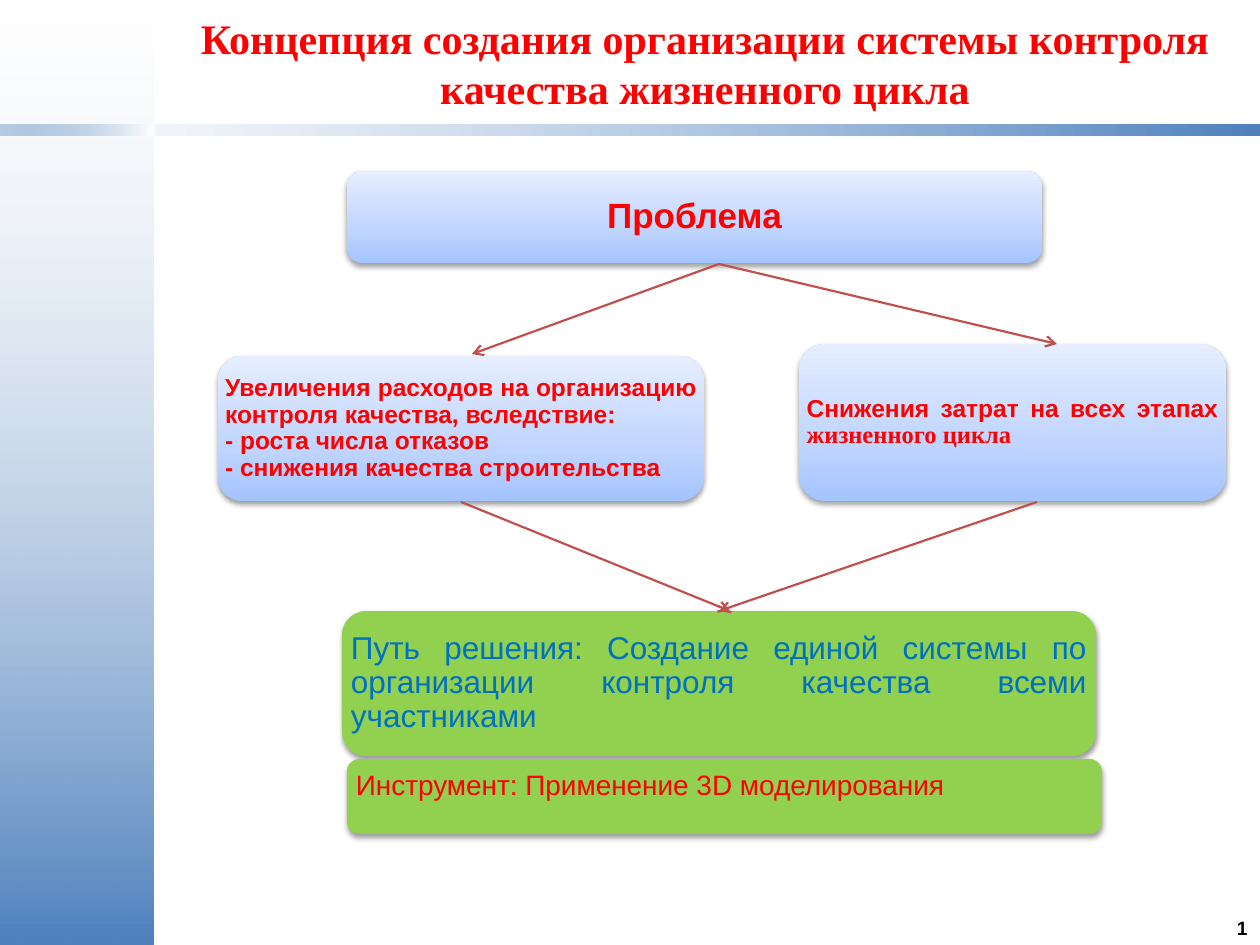
from lxml.etree import SubElement
from pptx import Presentation
from pptx.dml.color import RGBColor
from pptx.enum.shapes import MSO_CONNECTOR, MSO_SHAPE
from pptx.enum.text import MSO_ANCHOR, PP_ALIGN
from pptx.oxml.ns import qn
from pptx.util import Emu, Pt

PIXEL = 914400 / 126
WHITE = RGBColor(0xFF, 0xFF, 0xFF)
BLACK = RGBColor(0x00, 0x00, 0x00)
RED = RGBColor(0xFF, 0x00, 0x00)
BLUE = RGBColor(0x4F, 0x81, 0xBD)
TEXT_BLUE = RGBColor(0x00, 0x70, 0xC0)
GREEN = RGBColor(0x92, 0xD0, 0x50)
ARROW_RED = RGBColor(0xC0, 0x50, 0x4D)
PALE_BLUES = [
    (0, RGBColor(0xA4, 0xC4, 0xFF), 100),
    (35, RGBColor(0xBF, 0xD4, 0xFF), 100),
    (100, RGBColor(0xE6, 0xEE, 0xFF), 100),
]
CORNER = 0.1667
CORNER_INSET = 0.29


def px(*lengths):
    """Turn pixel lengths into a list of EMU lengths."""
    return [Emu(round(length * PIXEL)) for length in lengths]


def fill_gradient(shape, stops, angle):
    """Fill a shape with (position, colour, opacity) stops in percent."""
    gradient = shape._element.spPr.makeelement(qn("a:gradFill"), {"rotWithShape": "1"})
    stop_list = SubElement(gradient, qn("a:gsLst"))
    for position, color, opacity in stops:
        stop = SubElement(stop_list, qn("a:gs"), pos=str(position * 1000))
        value = SubElement(stop, qn("a:srgbClr"), val=str(color))
        SubElement(value, qn("a:alpha"), val=str(opacity * 1000))
    SubElement(gradient, qn("a:lin"), ang=str(angle * 60000), scaled="0")
    shape._element.spPr.find(qn("a:prstGeom")).addnext(gradient)


def add_soft_shadow(shape):
    """Give a shape a soft shadow below it."""
    effects = shape._element.spPr.find(qn("a:effectLst"))
    shadow = SubElement(effects, qn("a:outerShdw"), blurRad=str(Pt(3.1)),
                        dist=str(Pt(1.6)), dir="5400000", rotWithShape="0")
    color = SubElement(shadow, qn("a:srgbClr"), val=str(BLACK))
    SubElement(color, qn("a:alpha"), val="38000")


def write_text(frame, paragraphs, size, color=RED, bold=False, font="Arial",
               align=PP_ALIGN.CENTER, anchor=MSO_ANCHOR.MIDDLE, spacing=None, margin=None):
    """Write paragraphs, each a list of texts or (text, font) pairs, into a frame."""
    frame.word_wrap = True
    frame.vertical_anchor = anchor
    if margin is not None:
        frame.margin_left = frame.margin_right = margin
        frame.margin_top = frame.margin_bottom = margin
    for index, runs in enumerate(paragraphs):
        paragraph = frame.add_paragraph() if index else frame.paragraphs[0]
        paragraph.alignment = align
        paragraph.line_spacing = spacing
        for item in runs:
            text, run_font = item if isinstance(item, tuple) else (item, font)
            run = paragraph.add_run()
            run.text = text
            run.font.name = run_font
            run.font.size = Pt(size)
            run.font.bold = bold
            run.font.color.rgb = color


def add_band(slide, box, stops, angle):
    """Add a plain gradient rectangle."""
    shape = slide.shapes.add_shape(MSO_SHAPE.RECTANGLE, *px(*box))
    shape.shadow.inherit = False
    shape.line.fill.background()
    fill_gradient(shape, stops, angle)


def add_frame(slide, box):
    """Add the side panel, header bands and page number within a box."""
    left, top, width, height = box
    side, bar_top, bar = 154, top + 125, 11
    add_band(slide, (left, top, side, height), [(0, WHITE, 24), (100, BLUE, 100)], 90)
    add_band(slide, (left, bar_top, width, bar), [(0, WHITE, 54), (100, BLUE, 100)], 0)
    add_band(slide, (left, bar_top, side, bar), [(0, BLUE, 40), (100, WHITE, 100)], 0)
    number = slide.shapes.add_textbox(*px(left + width - 49, top + height - 35, 49, 35))
    write_text(number.text_frame, [["1"]], 11, BLACK, bold=True, align=PP_ALIGN.RIGHT)


def add_title(slide, box, text):
    """Place and format the title placeholder."""
    title = slide.shapes.title
    title.left, title.top, title.width, title.height = px(*box)
    write_text(title.text_frame, [[text]], 24, bold=True, font="Times New Roman")


def add_card(slide, box, paragraphs, size, inset, fill=None, **text_format):
    """Add a rounded card whose text keeps the given inset in pixels."""
    shape = slide.shapes.add_shape(MSO_SHAPE.ROUNDED_RECTANGLE, *px(*box))
    shape.adjustments[0] = CORNER
    shape.shadow.inherit = False
    shape.line.fill.background()
    if fill is None:
        fill_gradient(shape, PALE_BLUES, 270)
    else:
        shape.fill.solid()
        shape.fill.fore_color.rgb = fill
    add_soft_shadow(shape)
    margin = px(max(0, inset - CORNER * CORNER_INSET * min(box[2:])))[0]
    write_text(shape.text_frame, paragraphs, size, margin=margin, **text_format)


def add_arrow(slide, start, end):
    """Add an open-headed arrow between two points."""
    arrow = slide.shapes.add_connector(MSO_CONNECTOR.STRAIGHT, *px(*start, *end))
    arrow.line.color.rgb = ARROW_RED
    arrow.line.width = Pt(1.25)
    SubElement(arrow.line._get_or_add_ln(), qn("a:tailEnd"), type="arrow")
    SubElement(arrow._element.spPr, qn("a:effectLst"))


def add_diagram(slide, box):
    """Add the problem, its two branches and the solution within a box."""
    left, top = box[:2]

    def place(x, y, *size):
        """Move a point or area into the diagram box."""
        return (left + x, top + y, *size)

    justified = {"align": PP_ALIGN.JUSTIFY, "spacing": 0.9}
    add_card(slide, place(129, 0, 695, 92), [["Проблема"]], 20, 10, bold=True, spacing=0.9)
    add_card(slide, place(124, 440, 754, 145),
             [["Путь решения: Создание единой системы по организации контроля "
               "качества всеми участниками"]],
             18, 9, GREEN, color=TEXT_BLUE, **justified)
    add_card(slide, place(0, 185, 486, 145),
             [["Увеличения расходов на организацию контроля качества, вследствие:"],
              ["- роста числа отказов"],
              ["- снижения качества строительства"]],
             14, 7, bold=True, **justified)
    add_card(slide, place(581, 173, 427, 157),
             [["Снижения затрат на всех этапах ", ("жизненного цикла", "Times New Roman")]],
             14, 7, bold=True, **justified)
    add_card(slide, place(129, 588, 755, 75), [["Инструмент: Применение 3D моделирования"]],
             16, 9, GREEN, align=PP_ALIGN.LEFT, anchor=MSO_ANCHOR.TOP)
    for start, end in [((501, 93), (254, 183)), ((501, 93), (839, 173)),
                       ((243, 331), (512, 440)), ((819, 331), (501, 440))]:
        add_arrow(slide, place(*start), place(*end))


def main():
    """Build and save the slide."""
    presentation = Presentation()
    presentation.slide_width, presentation.slide_height = px(1260, 945)
    slide = presentation.slides.add_slide(presentation.slide_layouts[5])
    add_frame(slide, (0, 0, 1260, 945))
    add_title(slide, (174, 0, 1062, 125),
              "Концепция создания организации системы контроля качества жизненного цикла")
    add_diagram(slide, (218, 171, 1008, 663))
    presentation.save("out.pptx")


if __name__ == "__main__":
    main()
